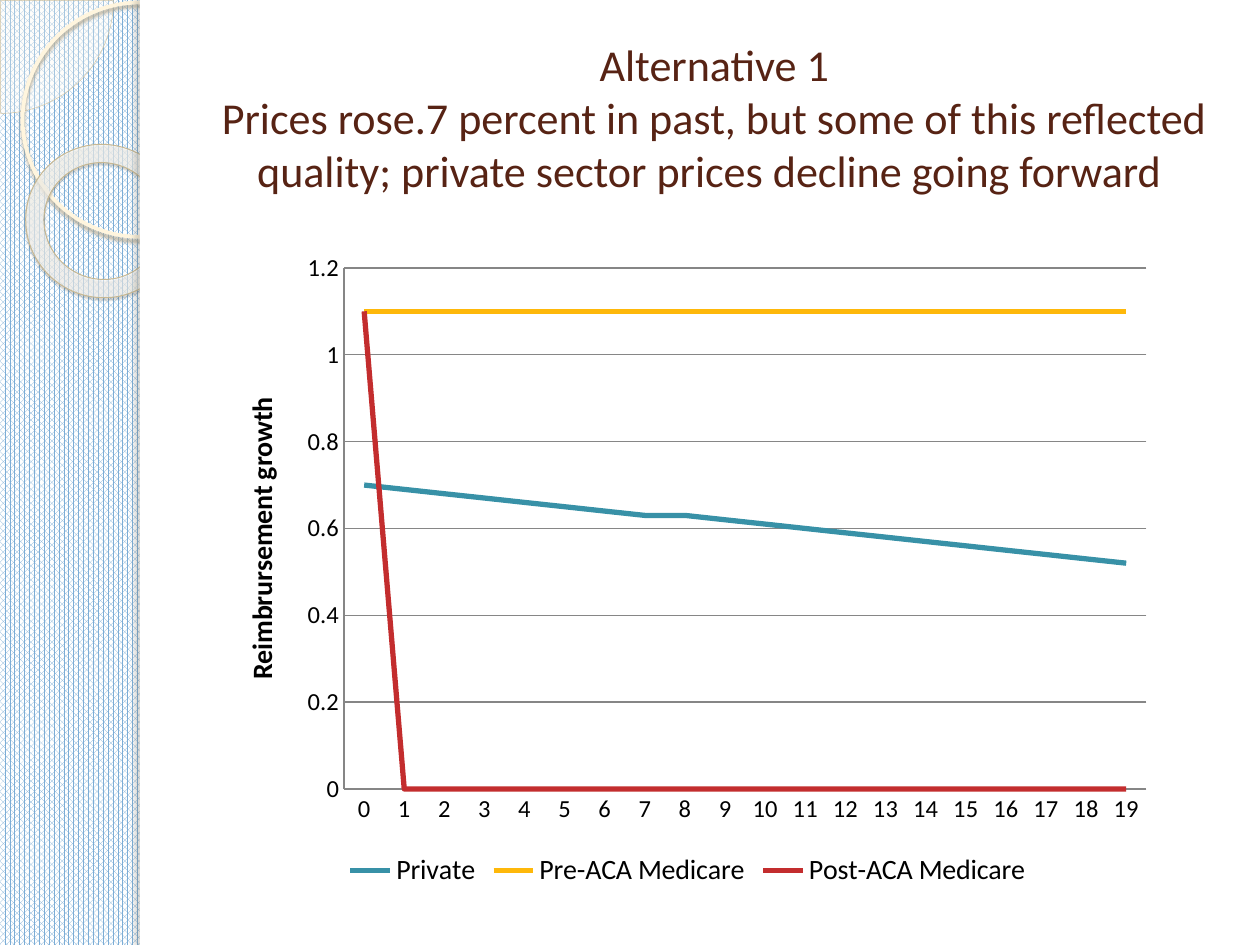
from dataclasses import dataclass
from typing import NamedTuple, Optional

import pptx
import pptx.chart.data
import pptx.dml.color
import pptx.enum.chart
import pptx.enum.dml
import pptx.enum.shapes
import pptx.enum.text
import pptx.oxml
import pptx.oxml.ns
import pptx.util

COLORS = {
    "stripe": "7CADD6", "white": "FFFFFF", "title": "572314", "text": "000000",
    "grid": "868686", "pie": "FEFAF4", "pie_edge": "D3C39F", "ring": "FFF5DE",
    "ring_shadow": "B0A68F", "donut_edge": "C7B893", "donut_shadow": "5A5444",
    "donut_inner": "FFFCF6", "donut_middle": "FFFEFB", "donut_outer": "F0D28E",
    "edge_shadow": "736F63", "private": "3891A7", "before": "FEB80A", "after": "C32D2E",
}
FONT = "Calibri"
COLUMNS, ROWS = 100, 75
SLIDE_WIDTH, SLIDE_HEIGHT = pptx.util.Inches(10), pptx.util.Inches(7.5)
SHAPES = pptx.enum.shapes.MSO_SHAPE
TITLE = (
    "Alternative 1\nPrices rose.7 percent in past, but some of this reflected "
    "quality; private sector prices decline going forward "
)


class Box(NamedTuple):
    column: float
    row: float
    columns: float
    rows: float

    def lengths(self) -> tuple[int, int, int, int]:
        return (
            round(self.column * SLIDE_WIDTH / COLUMNS),
            round(self.row * SLIDE_HEIGHT / ROWS),
            round(self.columns * SLIDE_WIDTH / COLUMNS),
            round(self.rows * SLIDE_HEIGHT / ROWS),
        )


class Shadow(NamedTuple):
    color: str
    opacity: int
    blur: float
    distance: float
    angle: int


class Stop(NamedTuple):
    position: int
    color: str
    opacity: int


class Series(NamedTuple):
    name: str
    color: str
    values: list[float]


@dataclass
class Ornament:
    kind: pptx.enum.shapes.MSO_SHAPE
    box: Box
    fill: Optional[str] = None
    opacity: int = 100
    gradient: tuple[Stop, ...] = ()
    line: Optional[str] = None
    line_width: float = 0
    shadow: Optional[Shadow] = None
    adjustments: tuple[float, ...] = ()
    rotation: float = 0


ORNAMENTS = [
    Ornament(SHAPES.PIE, Box(-8.9, -8.9, 17.9, 17.9), "pie", 33, line="pie_edge",
             line_width=0.25, adjustments=(0, 54.02)),
    Ornament(SHAPES.OVAL, Box(1.8, 0.2, 18.6, 18.6), line="ring", line_width=2.15,
             shadow=Shadow("ring_shadow", 85, 2, 2, 90)),
    Ornament(SHAPES.DONUT, Box(2, 11.5, 12.3, 12.1), line="donut_edge", line_width=0.58,
             gradient=(Stop(0, "donut_inner", 70), Stop(70, "donut_middle", 55),
                       Stop(100, "donut_outer", 60)),
             shadow=Shadow("donut_shadow", 35, 1, 1.2, 75), adjustments=(0.12,), rotation=38.6),
    Ornament(SHAPES.RECTANGLE, Box(11.1, 0, 88.9, ROWS), "white"),
    Ornament(SHAPES.RECTANGLE, Box(11.1, 0, 0.8, ROWS), "white",
             shadow=Shadow("edge_shadow", 25, 3, 3, 180)),
]
YEARS = range(20)
SERIES = [
    Series("Private", "private", [0.7, 0.69, 0.68, 0.67, 0.66, 0.65, 0.64, 0.63, 0.63, 0.62,
                                  0.61, 0.6, 0.59, 0.58, 0.57, 0.56, 0.55, 0.54, 0.53, 0.52]),
    Series("Pre-ACA Medicare", "before", [1.1 for _ in YEARS]),
    Series("Post-ACA Medicare", "after", [0 if year else 1.1 for year in YEARS]),
]


def rgb(name: str) -> pptx.dml.color.RGBColor:
    return pptx.dml.color.RGBColor.from_string(COLORS[name])


def color_xml(name: str, opacity: int) -> str:
    return f'<a:srgbClr val="{COLORS[name]}"><a:alpha val="{opacity * 1000}"/></a:srgbClr>'


def element(tag: str, attributes: str, content: str):
    namespace = pptx.oxml.ns.nsdecls("a")
    return pptx.oxml.parse_xml(f"<a:{tag} {namespace} {attributes}>{content}</a:{tag}>")


def replace_fill(shape, fill) -> None:
    shape.fill.background()
    properties = shape._element.spPr
    properties.replace(properties.find(pptx.oxml.ns.qn("a:noFill")), fill)


def add_ornament(slide, ornament: Ornament) -> None:
    shape = slide.shapes.add_shape(ornament.kind, *ornament.box.lengths())
    shape.rotation = ornament.rotation
    for index, value in enumerate(ornament.adjustments):
        shape.adjustments[index] = value
    shape.shadow.inherit = False
    if ornament.gradient:
        stops = "".join(
            f'<a:gs pos="{stop.position * 1000}">{color_xml(stop.color, stop.opacity)}</a:gs>'
            for stop in ornament.gradient
        )
        focus = '<a:fillToRect l="-408000" t="-50000" r="508000" b="150000"/>'
        replace_fill(shape, element(
            "gradFill", 'rotWithShape="1"',
            f'<a:gsLst>{stops}</a:gsLst><a:path path="circle">{focus}</a:path>'))
    elif ornament.fill:
        replace_fill(shape, element("solidFill", "", color_xml(ornament.fill, ornament.opacity)))
    else:
        shape.fill.background()
    if ornament.line:
        shape.line.color.rgb = rgb(ornament.line)
        shape.line.width = pptx.util.Pt(ornament.line_width)
    else:
        shape.line.fill.background()
    if ornament.shadow:
        shadow = ornament.shadow
        effects = shape._element.spPr.find(pptx.oxml.ns.qn("a:effectLst"))
        effects.append(element(
            "outerShdw",
            f'blurRad="{pptx.util.Pt(shadow.blur)}" dist="{pptx.util.Pt(shadow.distance)}" '
            f'dir="{shadow.angle * 60000}" algn="tl" rotWithShape="0"',
            color_xml(shadow.color, shadow.opacity)))


def style_font(font, size: float, color: str = "text", bold: bool = False) -> None:
    font.name = FONT
    font.size = pptx.util.Pt(size)
    font.bold = bold
    font.color.rgb = rgb(color)


def add_title(slide, box: Box) -> None:
    text_frame = slide.shapes.add_textbox(*box.lengths()).text_frame
    text_frame.word_wrap = True
    text_frame.vertical_anchor = pptx.enum.text.MSO_ANCHOR.MIDDLE
    paragraph = text_frame.paragraphs[0]
    paragraph.text = TITLE
    paragraph.alignment = pptx.enum.text.PP_ALIGN.CENTER
    for run in paragraph.runs:
        style_font(run.font, 25.2, "title")


def set_plot_layout(chart, x: float, y: float, width: float, height: float) -> None:
    plot_area = chart._chartSpace.chart.plotArea
    for old in plot_area.findall(pptx.oxml.ns.qn("c:layout")):
        plot_area.remove(old)
    plot_area.insert(0, pptx.oxml.parse_xml(
        f'<c:layout {pptx.oxml.ns.nsdecls("c")}><c:manualLayout><c:layoutTarget val="inner"/>'
        f'<c:xMode val="edge"/><c:yMode val="edge"/><c:x val="{x}"/><c:y val="{y}"/>'
        f'<c:w val="{width}"/><c:h val="{height}"/></c:manualLayout></c:layout>'))


def add_growth_chart(slide, box: Box) -> None:
    data = pptx.chart.data.CategoryChartData()
    data.categories = [str(year) for year in YEARS]
    for series in SERIES:
        data.add_series(series.name, series.values)
    chart = slide.shapes.add_chart(
        pptx.enum.chart.XL_CHART_TYPE.LINE, *box.lengths(), data).chart
    style_font(chart.font, 10)
    chart.has_title = False
    chart.has_legend = True
    chart.legend.position = pptx.enum.chart.XL_LEGEND_POSITION.BOTTOM
    chart.legend.include_in_layout = False
    style_font(chart.legend.font, 16)
    chart.plots[0].vary_by_categories = False
    for line, series in zip(chart.plots[0].series, SERIES):
        line.smooth = False
        line.marker.style = pptx.enum.chart.XL_MARKER_STYLE.NONE
        line.format.line.color.rgb = rgb(series.color)
        line.format.line.width = pptx.util.Pt(3)
    for axis in (chart.category_axis, chart.value_axis):
        axis.major_tick_mark = axis.minor_tick_mark = pptx.enum.chart.XL_TICK_MARK.NONE
        axis.format.line.color.rgb = rgb("grid")
        style_font(axis.tick_labels.font, 14)
    axis = chart.value_axis
    axis.minimum_scale, axis.maximum_scale, axis.major_unit = 0, 1.2, 0.2
    axis.major_gridlines.format.line.color.rgb = rgb("grid")
    axis.axis_title.text_frame.text = "Reimbrursement growth"
    style_font(axis.axis_title.text_frame.paragraphs[0].runs[0].font, 16, bold=True)
    set_plot_layout(chart, 0.14, 0.04, 0.84, 0.8)


def main() -> None:
    presentation = pptx.Presentation()
    presentation.slide_width, presentation.slide_height = SLIDE_WIDTH, SLIDE_HEIGHT
    slide = presentation.slides.add_slide(presentation.slide_layouts[6])
    background = slide.background.fill
    background.patterned()
    background.pattern = pptx.enum.dml.MSO_PATTERN.PERCENT_75
    background.fore_color.rgb = rgb("stripe")
    background.back_color.rgb = rgb("white")
    for ornament in ORNAMENTS:
        add_ornament(slide, ornament)
    add_title(slide, Box(15.7, 3, 82, 12.5))
    add_growth_chart(slide, Box(16.7, 19.2, 75.8, 51.7))
    presentation.save("out.pptx")


if __name__ == "__main__":
    main()
